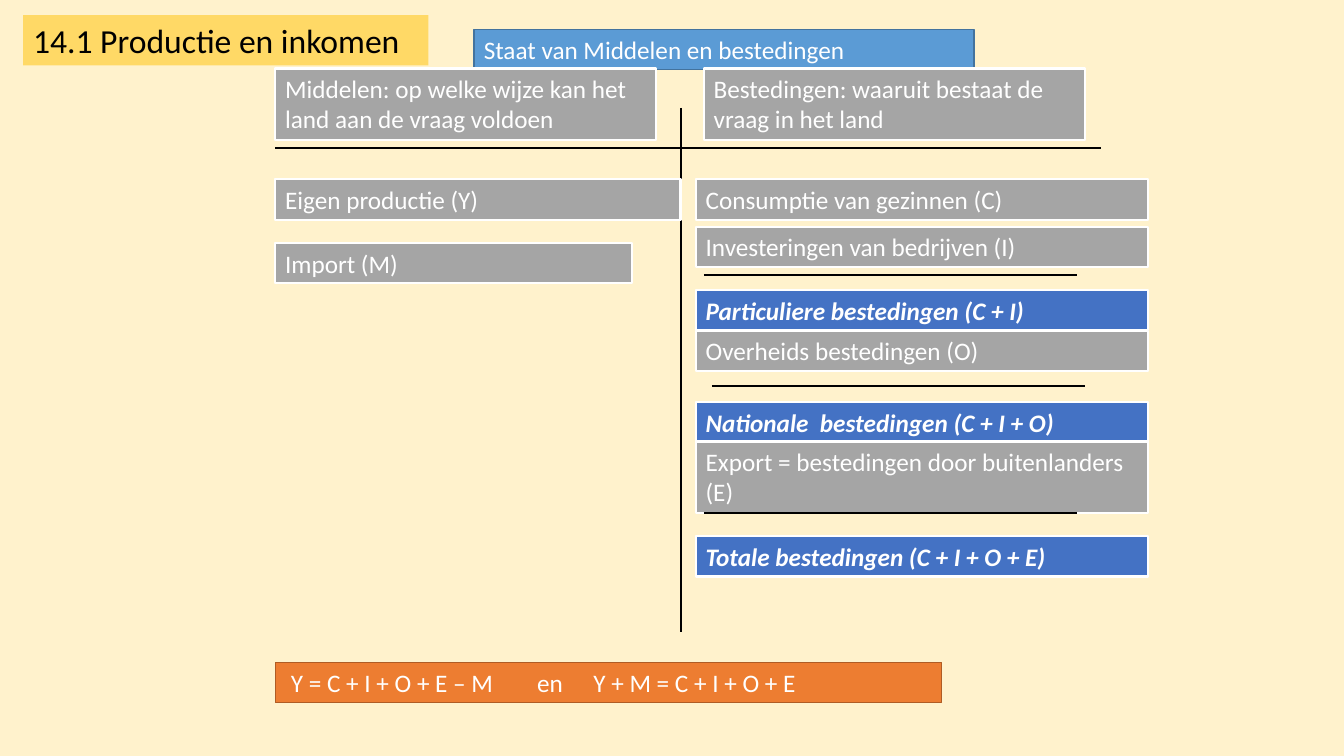
from pptx import Presentation
from pptx.dml.color import RGBColor
from pptx.enum.shapes import MSO_CONNECTOR, MSO_SHAPE
from pptx.enum.text import MSO_ANCHOR, MSO_AUTO_SIZE, PP_ALIGN
from pptx.oxml.ns import qn
from pptx.util import Inches, Pt
from lxml import etree

RECTANGLE = MSO_SHAPE.RECTANGLE
STRAIGHT = MSO_CONNECTOR.STRAIGHT
LEFT = PP_ALIGN.LEFT
TOP = MSO_ANCHOR.TOP
GROW = MSO_AUTO_SIZE.SHAPE_TO_FIT_TEXT

FONT = "Calibri"
CREAM, YELLOW, ORANGE = "FFF2CC", "FFD966", "ED7D31"
GRAY, BLUE, LIGHT_BLUE = "A5A5A5", "4472C4", "5B9BD5"
WHITE, BLACK = "FFFFFF", "000000"
ROW, DOUBLE_ROW = 0.4, 0.71
RULE_WIDTH = 3.7


def color(value):
    return RGBColor.from_string(value)


def write(frame, text, size=18, ink=WHITE, strong=False):
    para = frame.paragraphs[0]
    para.alignment = LEFT
    span = para.add_run()
    span.text = text
    span.font.name = FONT
    span.font.size = Pt(size)
    span.font.bold = strong
    span.font.italic = strong
    span.font.color.rgb = color(ink)


def add_box(page, area, text, fill=GRAY, border=WHITE, weight=1.5, **style):
    box = page.shapes.add_shape(RECTANGLE, *map(Inches, area))
    box.shadow.inherit = False
    box.fill.solid()
    box.fill.fore_color.rgb = color(fill)
    if border:
        box.line.color.rgb = color(border)
        box.line.width = Pt(weight)
    else:
        box.line.fill.background()
    frame = box.text_frame
    frame.word_wrap = True
    frame.auto_size = GROW
    frame.vertical_anchor = TOP
    write(frame, text, **style)


def add_rule(page, x1, y1, x2, y2):
    rule = page.shapes.add_connector(STRAIGHT, *map(Inches, (x1, y1, x2, y2)))
    rule.line.color.rgb = color(BLACK)
    rule.line.width = Pt(1.5)
    etree.SubElement(rule._element.spPr, qn("a:effectLst"))


def add_account_frame(page, left, top, width, height):
    add_rule(page, left, top + 0.4, left + width, top + 0.4)
    add_rule(page, left + 4.02, top, left + 4.02, top + height)


def add_resources(page, left, top):
    add_box(page, (left, top, 3.78, DOUBLE_ROW),
            "Middelen: op welke wijze kan het land aan de vraag voldoen")
    add_box(page, (left, top + 1.1, 4.02, ROW), "Eigen productie (Y)")
    add_box(page, (left, top + 1.73, 3.54, ROW), "Import (M)")


def add_spending(page, left, top, width):
    add_box(page, (left + 0.08, top, 3.78, DOUBLE_ROW),
            "Bestedingen: waaruit bestaat de vraag in het land")
    items = [
        (1.1, ROW, "Consumptie van gezinnen (C)"),
        (1.57, ROW, "Investeringen van bedrijven (I)"),
        (2.6, ROW, "Overheids bestedingen (O)"),
        (3.7, DOUBLE_ROW, "Export = bestedingen door buitenlanders (E)"),
    ]
    totals = [
        (2.2, "Particuliere bestedingen (C + I)"),
        (3.31, "Nationale  bestedingen (C + I + O)"),
        (4.64, "Totale bestedingen (C + I + O + E)"),
    ]
    rows = [(y, height, text, GRAY) for y, height, text in items]
    rows += [(y, ROW, text, BLUE) for y, text in totals]
    for y, height, text, fill in sorted(rows):
        add_box(page, (left, top + y, width, height), text,
                fill=fill, strong=fill == BLUE)
    for indent, y in [(0.08, 2.05), (0.16, 3.15), (0.08, 4.41)]:
        start = left + indent
        add_rule(page, start, top + y, start + RULE_WIDTH, top + y)


def build_slide(deck):
    page = deck.slides.add_slide(deck.slide_layouts[6])
    page.background.fill.solid()
    page.background.fill.fore_color.rgb = color(CREAM)
    add_box(page, (4.7, 0.29, 4.96, ROW), "Staat van Middelen en bestedingen",
            fill=LIGHT_BLUE, border="43739E", weight=1)
    add_account_frame(page, 2.73, 1.07, 8.19, 5.2)
    add_resources(page, 2.73, 0.68)
    add_spending(page, 6.9, 0.68, 4.49)
    add_box(page, (2.73, 6.57, 6.61, ROW),
            " Y = C + I + O + E – M \ten \t Y + M = C + I + O + E",
            fill=ORANGE, border="AF5C24", weight=1)
    add_box(page, (0.23, 0.15, 4.02, 0.5), "14.1 Productie en inkomen",
            fill=YELLOW, border=None, size=24, ink=BLACK)


def main():
    deck = Presentation()
    deck.slide_width = Inches(13.33)
    deck.slide_height = Inches(7.5)
    build_slide(deck)
    deck.save("out.pptx")


if __name__ == "__main__":
    main()
